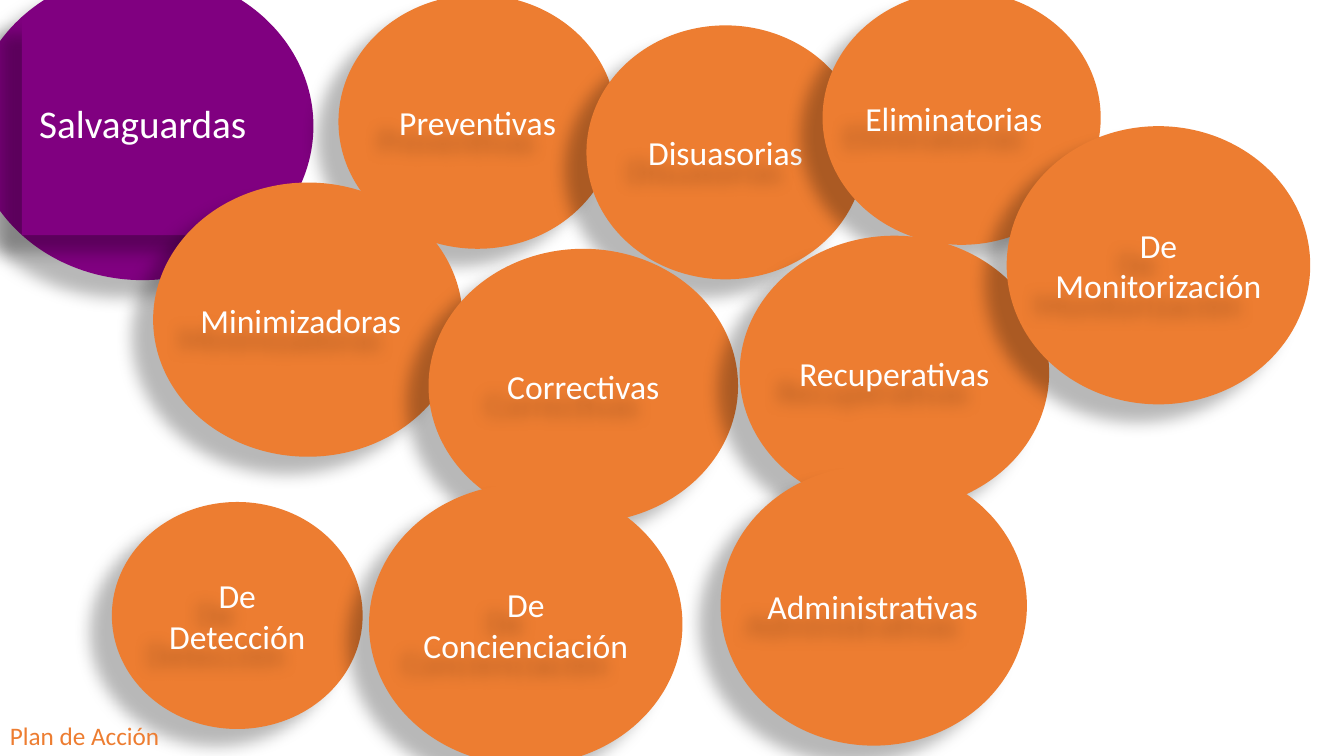
from lxml.etree import SubElement
from pptx import Presentation
from pptx.dml.color import RGBColor
from pptx.enum.shapes import MSO_SHAPE
from pptx.enum.text import MSO_ANCHOR, MSO_AUTO_SIZE, PP_ALIGN
from pptx.oxml.ns import qn
from pptx.util import Cm, Pt

COLOURS = {"purple": "800080", "orange": "ED7D31", "white": "FFFFFF", "black": "000000"}
INSCRIBED = 0.1464
LEFT, CENTRE = PP_ALIGN.LEFT, PP_ALIGN.CENTER
SMALL, LARGE = (7.01, 6.4), (7.8, 6.91)
MEASURES = [
    ("Preventivas", (8.53, -0.13), SMALL, CENTRE),
    ("Disuasorias", (14.78, 0.64), SMALL, CENTRE),
    ("Eliminatorias", (20.73, -0.23), SMALL, LEFT),
    ("Minimizadoras", (3.86, 4.6), LARGE, LEFT),
    ("Correctivas", (10.8, 6.27), LARGE, CENTRE),
    ("Recuperativas", (18.64, 5.94), LARGE, CENTRE),
    ("De Monitorización", (25.37, 3.18), (7.65, 7.01), CENTRE),
    ("De Detección", (2.82, 12.65), (6.32, 5.72), CENTRE),
    ("De Concienciación", (9.3, 12.19), (7.9, 7.09), CENTRE),
    ("Administrativas", (18.16, 11.73), (7.72, 7.06), LEFT),
]


def colour(name):
    """Return the named colour."""
    return RGBColor.from_string(COLOURS[name])


def paint(shape, name):
    """Fill a shape with one colour and remove its outline."""
    shape.fill.solid()
    shape.fill.fore_color.rgb = colour(name)
    shape.line.fill.background()


def cast_shadow(shape):
    """Give a shape a soft shadow towards the lower left."""
    shape.shadow.inherit = False
    effects = shape._element.spPr.find(qn("a:effectLst"))
    shadow = SubElement(effects, qn("a:outerShdw"), blurRad=str(Pt(11.8)),
                        dist=str(Pt(19.7)), dir=str(141 * 60000),
                        algn="ctr", rotWithShape="0")
    tint = SubElement(shadow, qn("a:srgbClr"), val=COLOURS["black"])
    SubElement(tint, qn("a:alpha"), val="28000")


def write(shape, text, size, name, align):
    """Write one paragraph into a shape and return it."""
    para = shape.text_frame.paragraphs[0]
    para.text = text
    para.alignment = align
    para.font.name = "Calibri"
    para.font.size = Pt(size)
    para.font.color.rgb = colour(name)
    return para


def add_bubble(page, text, corner, extent, align, fill="orange", size=24):
    """Group an ellipse with a label in its inscribed rectangle."""
    (left, top), (width, height) = corner, extent
    bubble = page.shapes.add_group_shape().shapes
    ellipse = bubble.add_shape(MSO_SHAPE.OVAL, Cm(left), Cm(top), Cm(width), Cm(height))
    paint(ellipse, fill)
    cast_shadow(ellipse)
    label = bubble.add_textbox(Cm(left + INSCRIBED * width), Cm(top + INSCRIBED * height),
                               Cm(width * (1 - 2 * INSCRIBED)),
                               Cm(height * (1 - 2 * INSCRIBED)))
    cast_shadow(label)
    frame = label.text_frame
    frame.word_wrap = True
    frame.vertical_anchor = MSO_ANCHOR.MIDDLE
    frame.margin_left = frame.margin_right = Cm(0.05)
    frame.margin_top = frame.margin_bottom = Cm(0.08)
    return label, write(label, text, size, "white", align)


def add_title_bubble(page, corner, extent):
    """Place the purple title bubble, whose label is filled too."""
    label, para = add_bubble(page, "Salvaguardas", corner, extent, CENTRE, "purple", 28)
    paint(label, "purple")
    para.line_spacing = 0.9


def add_caption(page, left, top, width, height):
    """Place the caption in the lower left corner."""
    box = page.shapes.add_textbox(Cm(left), Cm(top), Cm(width), Cm(height))
    box.text_frame.word_wrap = True
    box.text_frame.auto_size = MSO_AUTO_SIZE.SHAPE_TO_FIT_TEXT
    write(box, "Plan de Acción", 18, "orange", LEFT)


def main():
    """Build the slide and save it."""
    deck = Presentation()
    deck.slide_width, deck.slide_height = Cm(33.87), Cm(19.05)
    page = deck.slides.add_slide(deck.slide_layouts[6])
    add_title_bubble(page, (-0.71, -0.71), (8.61, 7.77))
    for text, corner, extent, align in MEASURES:
        add_bubble(page, text, corner, extent, align)
    add_caption(page, 0, 18.03, 4.55, 1.02)
    deck.save("out.pptx")


if __name__ == "__main__":
    main()
